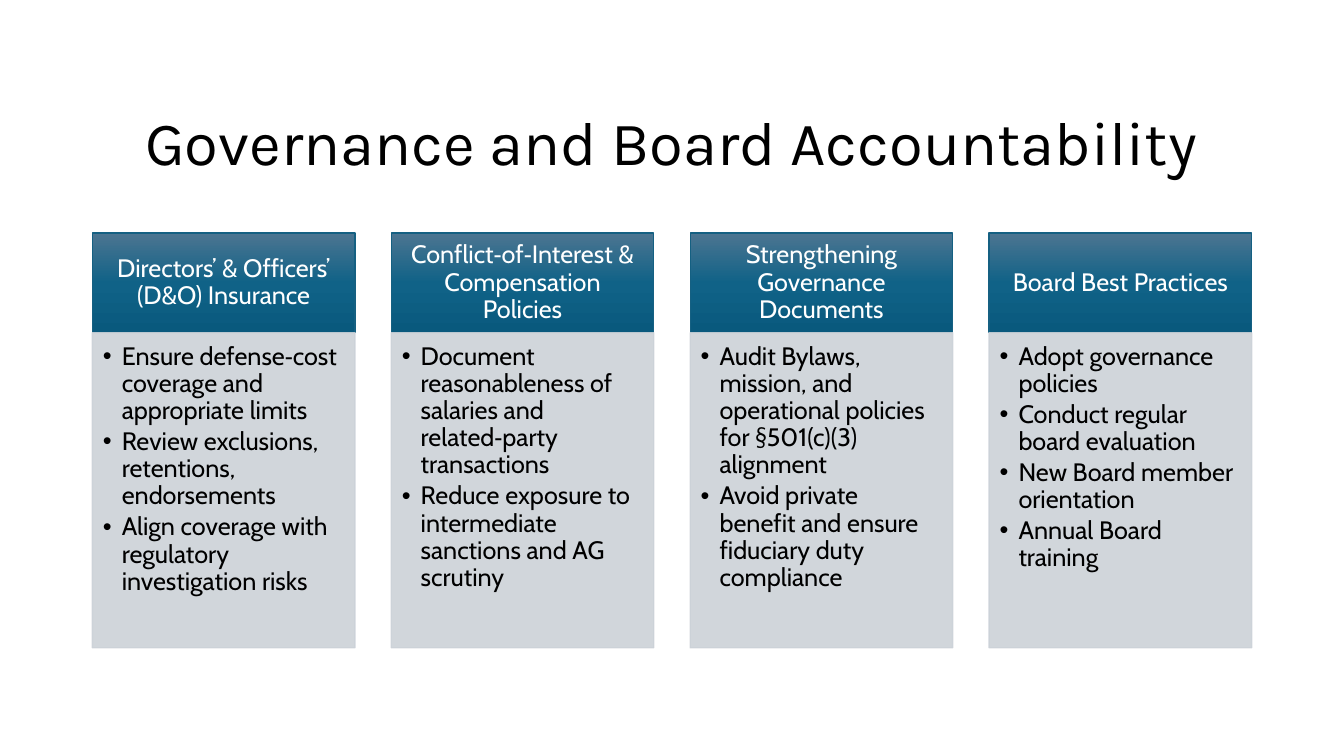
from lxml import etree
from pptx import Presentation
from pptx import util as u
from pptx.dml.color import RGBColor
from pptx.enum import shapes, text
from pptx.oxml.ns import qn

SCALE = 9525
HUES = {
    "ink": "000000", "pale": "FFFFFF", "edge": "156082", "panel": "CCD2D8",
    "top": "4C7591", "mid": "106287", "low": "09597D",
}
LEFT, SPAN, WIDE = 88, 1104, 250
HEAD_TOP, HEAD_TALL, BODY_TALL = 222, 95, 300
COLUMNS = [
    ("Directors’ & Officers’ (D&O) Insurance", [
        "Ensure defense‑cost coverage and appropriate limits",
        "Review exclusions, retentions, endorsements",
        "Align coverage with regulatory investigation risks"]),
    ("Conflict‑of‑Interest & Compensation Policies", [
        "Document reasonableness of salaries and related‑party transactions",
        "Reduce exposure to intermediate sanctions and AG scrutiny"]),
    ("Strengthening Governance Documents", [
        "Audit Bylaws, mission, and operational policies for §501(c)(3) alignment",
        "Avoid private benefit and ensure fiduciary duty compliance"]),
    ("Board Best Practices", [
        "Adopt governance policies",
        "Conduct regular board evaluation",
        "New Board member orientation",
        "Annual Board training"]),
]


def px(count):
    return u.Emu(round(count * SCALE))


def hue(name):
    return RGBColor.from_string(HUES[name])


def sub(node, tag, **attrs):
    return etree.SubElement(node, qn(tag), attrs)


def inset(frame, sides, anchor):
    """Set left, top, right and bottom margins, wrapping and anchor."""
    frame.margin_left, frame.margin_top, frame.margin_right, frame.margin_bottom = map(px, sides)
    frame.word_wrap = True
    frame.auto_size = text.MSO_AUTO_SIZE.NONE
    frame.vertical_anchor = anchor


def style(para, font, size, color, align):
    para.alignment = align
    para.line_spacing = 0.9
    for run in para.runs:
        run.font.name = font
        run.font.size = u.Pt(size)
        run.font.color.rgb = hue(color)


def space(para, share):
    """Add space after a paragraph as a share of its line, in percent."""
    after = sub(para._p.get_or_add_pPr(), "a:spcAft")
    sub(after, "a:spcPct", val=str(share * 1000))


def bullet(para):
    props = para._p.get_or_add_pPr()
    props.set("marL", str(px(18)))
    props.set("indent", str(px(-18)))
    sub(props, "a:buFont", typeface="Arial")
    sub(props, "a:buChar", char="•")


def shade(box):
    """Fill a box with the three-stop gradient, from top to bottom."""
    box.fill.gradient()
    box.fill.gradient_angle = 270
    stops = box._element.spPr.find(".//" + qn("a:gsLst"))
    for stop in list(stops):
        stops.remove(stop)
    for name, spot in (("top", 0), ("mid", 50), ("low", 100)):
        stop = sub(stops, "a:gs", pos=str(spot * 1000))
        sub(stop, "a:srgbClr", val=HUES[name])


def fade(box, share):
    for color in box._element.spPr.iter(qn("a:srgbClr")):
        sub(color, "a:alpha", val=str(share * 1000))


def add_box(slide, left, top, tall, edge):
    box = slide.shapes.add_shape(
        shapes.MSO_SHAPE.RECTANGLE, px(left), px(top), px(WIDE), px(tall))
    box.shadow.inherit = False
    box.line.color.rgb = hue(edge)
    box.line.width = u.Pt(1)
    return box


def add_head(slide, left, label):
    box = add_box(slide, left, HEAD_TOP, HEAD_TALL, "edge")
    shade(box)
    frame = box.text_frame
    inset(frame, (13, 8, 13, 8), text.MSO_ANCHOR.MIDDLE)
    frame.text = label
    para = frame.paragraphs[0]
    style(para, "Cabin", 18, "pale", text.PP_ALIGN.CENTER)
    space(para, 35)


def add_body(slide, left, items):
    box = add_box(slide, left, HEAD_TOP + HEAD_TALL, BODY_TALL, "panel")
    box.fill.solid()
    box.fill.fore_color.rgb = hue("panel")
    fade(box, 90)
    frame = box.text_frame
    inset(frame, (10, 10, 13, 15), text.MSO_ANCHOR.TOP)
    frame.text = "\n".join(items)
    for para in frame.paragraphs:
        para.level = 1
        style(para, "Cabin", 18, "ink", text.PP_ALIGN.LEFT)
        space(para, 15)
        bullet(para)


def add_title(slide, label):
    title = slide.shapes.title
    title.left, title.top, title.width, title.height = map(px, (LEFT, 99, SPAN, 79))
    frame = title.text_frame
    inset(frame, (0, 0, 0, 0), text.MSO_ANCHOR.MIDDLE)
    frame.text = label
    style(frame.paragraphs[0], "Karla", 44, "ink", text.PP_ALIGN.CENTER)


def main():
    deck = Presentation()
    deck.slide_width, deck.slide_height = px(1280), px(720)
    slide = deck.slides.add_slide(deck.slide_layouts[5])
    add_title(slide, "Governance and Board Accountability")
    step = (SPAN - WIDE) / (len(COLUMNS) - 1)
    for rank, (label, items) in enumerate(COLUMNS):
        left = LEFT + rank * step
        add_head(slide, left, label)
        add_body(slide, left, items)
    deck.save("out.pptx")


if __name__ == "__main__":
    main()
